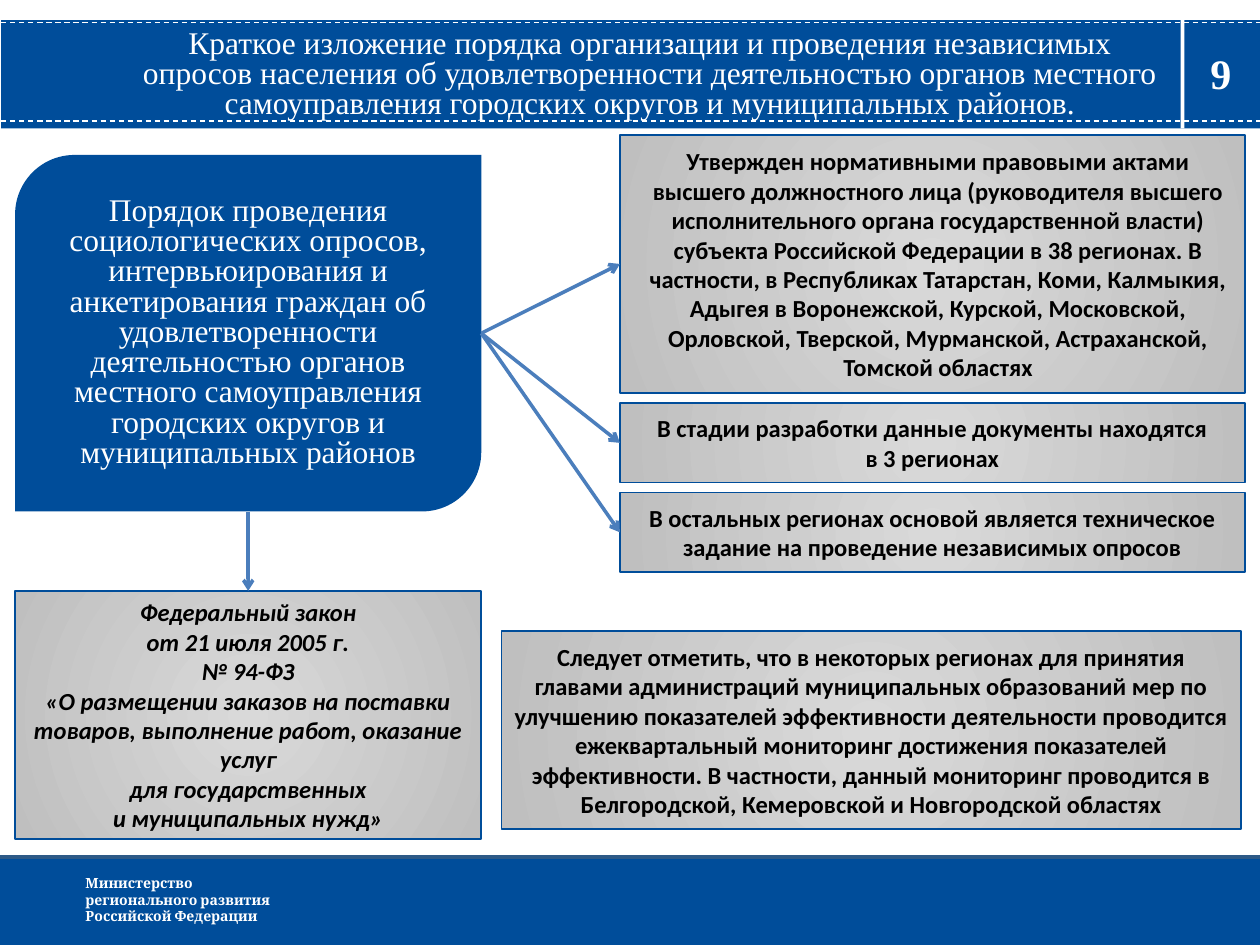
"""Build the slide on how independent opinion polls are organised."""
from lxml.etree import SubElement
from pptx import Presentation
from pptx.dml.color import RGBColor
from pptx.enum.dml import MSO_LINE
from pptx.enum.shapes import MSO_CONNECTOR, MSO_SHAPE
from pptx.enum.text import MSO_ANCHOR, PP_ALIGN
from pptx.oxml.ns import qn
from pptx.util import Inches, Pt

BLUE = RGBColor(0x00, 0x4D, 0x9A)
EDGE = RGBColor(0x2D, 0x5A, 0x87)
ARROW = RGBColor(0x4B, 0x7E, 0xBC)
LIGHT = RGBColor(0xD9, 0xD9, 0xD9)
GREY = RGBColor(0xBF, 0xBF, 0xBF)
WHITE = RGBColor(0xFF, 0xFF, 0xFF)
BLACK = RGBColor(0x00, 0x00, 0x00)

SERIF = "Times New Roman"
LEFT, WIDTH = 0.12, 3.7
RIGHT, GAP = 4.92, 0.08

TITLE = ("Краткое изложение порядка организации и проведения независимых опросов "
         "населения об удовлетворенности деятельностью органов местного "
         "самоуправления городских округов и муниципальных районов.")
ORDER = ("Порядок проведения социологических опросов, интервьюирования и "
         "анкетирования граждан об удовлетворенности деятельностью органов "
         "местного самоуправления городских округов и муниципальных районов")
STATES = [
    (2.05, 0.09,
     "Утвержден нормативными правовыми актами высшего должностного лица "
     "(руководителя высшего исполнительного органа государственной власти) "
     "субъекта Российской Федерации в 38 регионах. В частности, в Республиках "
     "Татарстан, Коми, Калмыкия, Адыгея в Воронежской, Курской, Московской, "
     "Орловской, Тверской, Мурманской, Астраханской, Томской областях"),
    (0.63, 0, "В стадии разработки данные документы находятся\nв 3 регионах"),
    (0.63, 0, "В остальных регионах основой является техническое задание на "
              "проведение независимых опросов"),
]
LAW = ("Федеральный закон\nот 21 июля 2005 г.\n№ 94-ФЗ\n"
       "«О размещении заказов на поставки товаров, выполнение работ, оказание услуг\n"
       "для государственных\nи муниципальных нужд»")
NOTE = ("Следует отметить, что в некоторых регионах для принятия главами "
        "администраций муниципальных образований мер по улучшению показателей "
        "эффективности деятельности проводится ежеквартальный мониторинг "
        "достижения показателей эффективности. В частности, данный мониторинг "
        "проводится в Белгородской, Кемеровской и Новгородской областях")
OWNER = "Министерство\nрегионального развития\nРоссийской Федерации"


def write(shape, text, font, size, color, bold=False, italic=False,
          align=PP_ALIGN.CENTER, spacing=None):
    """Fill a shape with wrapped text in one style."""
    frame = shape.text_frame
    frame.word_wrap = True
    frame.text = text
    for para in frame.paragraphs:
        para.alignment = align
        if spacing:
            para.line_spacing = spacing
        for run in para.runs:
            run.font.name = font
            run.font.size = Pt(size)
            run.font.bold = bold
            run.font.italic = italic
            run.font.color.rgb = color


def label(slide, box, text, font, size, **style):
    """Add a white text box and return it."""
    shape = slide.shapes.add_textbox(*map(Inches, box))
    write(shape, text, font, size, WHITE, **style)
    return shape


def block(slide, box, color=BLUE, kind=MSO_SHAPE.RECTANGLE):
    """Add a plain filled shape without outline."""
    shape = slide.shapes.add_shape(kind, *map(Inches, box))
    shape.shadow.inherit = False
    shape.fill.solid()
    shape.fill.fore_color.rgb = color
    shape.line.fill.background()
    return shape


def card(slide, box, text, italic=False, indent=0):
    """Add an outlined card with a round gradient and bold text."""
    shape = block(slide, box)
    shape.line.color.rgb = BLUE
    shape.line.width = Pt(1)
    shape.fill.gradient()
    for stop, color in zip(shape.fill.gradient_stops, (LIGHT, GREY)):
        stop.color.rgb = color
    grad = shape._element.spPr.find(qn("a:gradFill"))
    grad.remove(grad.find(qn("a:lin")))
    glow = SubElement(grad, qn("a:path"), {"path": "circle"})
    SubElement(glow, qn("a:fillToRect"), dict.fromkeys("ltrb", "50000"))
    write(shape, text, "Calibri", 14, BLACK, bold=True, italic=italic)
    shape.text_frame.vertical_anchor = MSO_ANCHOR.MIDDLE
    if indent:
        for para in shape.text_frame.paragraphs:
            para._p.get_or_add_pPr().set("marL", str(Inches(indent)))
    return shape


def rule(slide, start, end, color, width):
    """Add a straight line without shadow."""
    line = slide.shapes.add_connector(
        MSO_CONNECTOR.STRAIGHT, *map(Inches, (*start, *end)))
    line.line.color.rgb = color
    line.line.width = Pt(width)
    SubElement(line._element.spPr, qn("a:effectLst"))
    return line


def arrow(slide, start, target, side):
    """Draw an arrow from a point to the side of a card."""
    line = rule(slide, start, start, ARROW, 2)
    line.end_connect(target, side)
    SubElement(line.line._get_or_add_ln(), qn("a:tailEnd"), {"type": "arrow"})


def header(slide):
    """Draw the title band with the slide number."""
    block(slide, (0.01, 0.16, 9.99, 0.86))
    for y in (0.18, 0.96):
        line = rule(slide, (0.01, y), (10.01, y), WHITE, 0.75)
        line.line.dash_style = MSO_LINE.DASH
    title = label(slide, (0.98, 0.21, 8.36, 1.1), TITLE, SERIF, 18, spacing=0.8)
    frame = title.text_frame
    frame.margin_left = frame.margin_right = Inches(0.06)
    frame.margin_top = frame.margin_bottom = Inches(0.03)
    block(slide, (9.37, 0.15, 0.03, 0.87), WHITE)
    label(slide, (9.38, 0.33, 0.62, 0.5), "9", SERIF, 24, bold=True)


def footer(slide):
    """Draw the bottom band with the owner's name."""
    block(slide, (-0.01, 6.8, 10.02, 0.7))
    rule(slide, (-0.01, 6.8), (10.03, 6.8), EDGE, 2)
    label(slide, (0.58, 6.89, 2.55, 0.5), OWNER, "Cambria", 8, bold=True,
          align=PP_ALIGN.LEFT)


def scheme(slide):
    """Draw the order, its legal basis and its state in the regions."""
    top, height = 1.23, 2.83
    order = block(slide, (LEFT, top, WIDTH, height),
                  kind=MSO_SHAPE.ROUND_2_DIAG_RECTANGLE)
    write(order, ORDER, SERIF, 18, WHITE, spacing=0.8)
    order.text_frame.vertical_anchor = MSO_ANCHOR.MIDDLE

    y = 1.07
    for size, indent, text in STATES:
        state = card(slide, (RIGHT, y, 4.96, size), text, indent=indent)
        arrow(slide, (LEFT + WIDTH, top + height / 2), state, 1)
        y += size + GAP

    law = card(slide, (LEFT, 4.69, WIDTH, 1.97), LAW, italic=True)
    arrow(slide, (LEFT + WIDTH / 2, top + height), law, 0)
    card(slide, (3.98, 5.01, 5.87, 1.57), NOTE)


def main():
    """Build and save the slide."""
    deck = Presentation()
    deck.slide_width, deck.slide_height = Inches(10), Inches(7.5)
    slide = deck.slides.add_slide(deck.slide_layouts[6])
    header(slide)
    footer(slide)
    scheme(slide)
    deck.save("out.pptx")


if __name__ == "__main__":
    main()
